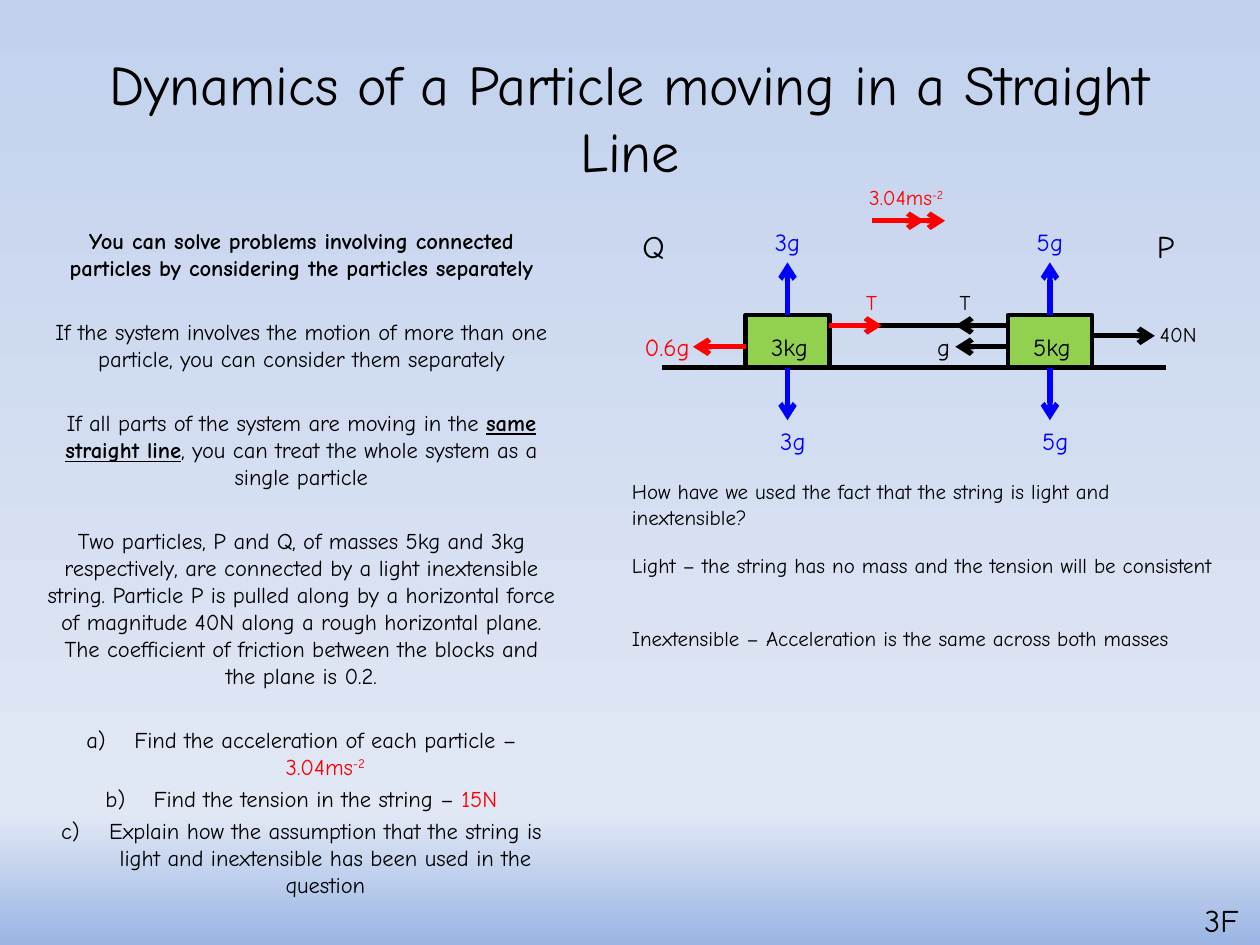
from copy import deepcopy

from lxml.etree import SubElement
from pptx import Presentation
from pptx.dml.color import RGBColor
from pptx.enum.shapes import MSO_CONNECTOR as Connector, MSO_SHAPE as Shape
from pptx.enum.text import MSO_ANCHOR as Anchor, MSO_AUTO_SIZE as AutoSize, PP_ALIGN as Align
from pptx.oxml.ns import qn
from pptx.util import Cm, Pt

COLORS = {
    "black": "000000", "red": "FF0000", "blue": "0000FF", "green": "92D050",
    "sky_top": "C2D1ED", "sky_mid": "E1E8F5", "sky_low": "9AB5E4",
}
FONT = "Comic Neue"
TITLE_ONLY = 5


def rgb(name):
    return RGBColor.from_string(COLORS[name])


def add_run(paragraph, text, size=12, color="black", bold=False, underline=False, raised=False):
    run = paragraph.add_run()
    run.text = text
    font = run.font
    font.name, font.size = FONT, Pt(size)
    font.bold, font.underline = bold, underline
    font.color.rgb = rgb(color)
    if raised:
        run._r.get_or_add_rPr().set("baseline", "30000")


class SlideBuilder:
    line_width = 3
    block_line_width = 2.5
    body_size = 12.9

    def __init__(self, slide):
        self.slide = slide

    def background(self, *stops):
        fill = self.slide.background.fill
        fill.gradient()
        fill.gradient_angle = 270
        stop_list = self.slide._element.find(".//" + qn("a:gsLst"))
        while len(stop_list) < len(stops):
            stop_list.append(deepcopy(stop_list[-1]))
        for stop, (position, color) in zip(fill.gradient_stops, stops):
            stop.position = position
            stop.color.rgb = rgb(color)

    def title(self, text, left, top, width, height):
        title = self.slide.shapes.title
        title.left, title.top, title.width, title.height = map(Cm, (left, top, width, height))
        frame = title.text_frame
        frame.word_wrap, frame.auto_size = True, AutoSize.NONE
        frame.vertical_anchor = Anchor.MIDDLE
        frame.paragraphs[0].alignment = Align.CENTER
        add_run(frame.paragraphs[0], text, size=32)

    def frame(self, left, top, width, height, wrap=True):
        box = self.slide.shapes.add_textbox(*map(Cm, (left, top, width, height)))
        box.text_frame.word_wrap = wrap
        return box.text_frame

    def label(self, text, left, top, width, height=0.86, align=Align.CENTER,
              wrap=False, power=None, **style):
        paragraph = self.frame(left, top, width, height, wrap).paragraphs[0]
        paragraph.alignment = align
        add_run(paragraph, text, **style)
        if power:
            add_run(paragraph, power, raised=True, **style)

    def body(self, paragraphs, left, top, width, height):
        """Each paragraph is (is_lettered, space_before, [(text, style), ...])."""
        frame = self.frame(left, top, width, height)
        for index, (lettered, space, runs) in enumerate(paragraphs):
            paragraph = frame.add_paragraph() if index else frame.paragraphs[0]
            paragraph.alignment = Align.CENTER
            paragraph.space_before = Pt(space)
            if lettered:
                properties = paragraph._p.get_or_add_pPr()
                properties.set("marL", str(Cm(0.97)))
                properties.set("indent", str(-Cm(0.97)))
                SubElement(properties, qn("a:buFont"), typeface=FONT)
                SubElement(properties, qn("a:buAutoNum"), type="alphaLcParenR")
            for text, style in runs:
                add_run(paragraph, text, size=self.body_size, **style)

    def block(self, left, top, width, height):
        block = self.slide.shapes.add_shape(Shape.RECTANGLE, *map(Cm, (left, top, width, height)))
        block.shadow.inherit = False
        block.fill.solid()
        block.fill.fore_color.rgb = rgb("green")
        block.line.color.rgb = rgb("black")
        block.line.width = Pt(self.block_line_width)

    def line(self, x, y, dx=0, dy=0, color="black", arrow=True):
        line = self.slide.shapes.add_connector(
            Connector.STRAIGHT, *map(Cm, (x, y, x + dx, y + dy)))
        line.line.color.rgb = rgb(color)
        line.line.width = Pt(self.line_width)
        if arrow:
            SubElement(line.line._get_or_add_ln(), qn("a:tailEnd"), type="arrow")
        SubElement(line._element.spPr, qn("a:effectLst"))


def draw_forces(page):
    q_left, p_left = 15.03, 20.32
    block_top, block_width, block_height = 6.35, 1.69, 1.06
    ground = block_top + block_height
    string_y, friction_y, pull_y = 6.56, 6.99, 6.77
    q_right, p_right = q_left + block_width, p_left + block_width
    force = 1.06

    # Ground, blocks and string
    page.line(13.34, ground, dx=10.16, arrow=False)
    for left in (q_left, p_left):
        page.block(left, block_top, block_width, block_height)
    page.line(q_right, string_y, dx=p_left - q_right, arrow=False)

    # Horizontal forces
    page.line(p_right, pull_y, dx=1.27)
    page.line(p_left, friction_y, dx=-force)
    page.line(q_left, friction_y, dx=-force, color="red")
    page.line(q_right, string_y, dx=force, color="red")
    page.line(p_left, string_y, dx=-force)

    # Acceleration, with a double head
    for length in (force, 1.48):
        page.line(17.57, 4.45, dx=length, color="red")

    # Weight and reaction on each block
    for left, mass in ((q_left, 3), (p_left, 5)):
        middle = left + block_width / 2
        page.line(middle, block_top, dy=-force, color="blue")
        page.line(middle, ground, dy=force, color="blue")
        page.label(f"{mass}kg", left + 0.21, string_y, 1.35, size=14)
        page.label(f"{mass}g", left + 0.21, 4.45, 1.27, size=14, color="blue")
        page.label(f"{mass}g", left + 0.42, 8.47, 1.07, size=14, color="blue")

    # Force and particle labels
    page.label("40N", 23.07, 6.35, 1.37, 0.76)
    page.label("T", 19.05, 5.72, 0.81, 0.76)
    page.label("T", 17.15, 5.72, 0.84, 0.76, color="red")
    page.label("3.04ms", 17.15, 3.6, 2.24, 0.76, power="-2", color="red")
    page.label("g", 18.63, string_y, 0.79, size=14)
    page.label("0.6g", 12.7, string_y, 1.5, size=14, color="red")
    page.label("P", 23.07, 4.45, 0.84, 1.02, align=Align.LEFT, size=18)
    page.label("Q", 12.7, 4.45, 1.07, 1.02, align=Align.LEFT, size=18)


def main():
    deck = Presentation()
    deck.slide_width, deck.slide_height = Cm(25.4), Cm(19.05)
    page = SlideBuilder(deck.slides.add_slide(deck.slide_layouts[TITLE_ONLY]))
    page.background((0, "sky_top"), (0.86, "sky_mid"), (1, "sky_low"))
    page.title("Dynamics of a Particle moving in a Straight Line", 1.27, 0.76, 22.86, 3.18)

    # Theory and question
    bold, red, plain = {"bold": True}, {"color": "red"}, {}
    section, item = 21, 2.7
    page.body([
        (False, 0, [("You can solve problems involving connected particles by "
                     "considering the particles separately", bold)]),
        (False, section, [("If the system involves the motion of more than one particle, "
                           "you can consider them separately", plain)]),
        (False, section, [("If all parts of the system are moving in the ", plain),
                          ("same straight line", {"bold": True, "underline": True}),
                          (", you can treat the whole system as a single particle", plain)]),
        (False, section, [("Two particles, P and Q, of masses 5kg and 3kg respectively, are "
                           "connected by a light inextensible string. Particle P is pulled "
                           "along by a horizontal force of magnitude 40N along a rough "
                           "horizontal plane. The coefficient of friction between the blocks "
                           "and the plane is 0.2.", plain)]),
        (True, section, [("Find the acceleration of each particle – ", plain),
                         ("3.04ms", red), ("-2", {"color": "red", "raised": True})]),
        (True, item, [("Find the tension in the string – ", plain), ("15N", red)]),
        (True, item, [("Explain how the assumption that the string is light and "
                       "inextensible has been used in the question", plain)]),
    ], 0.69, 4.45, 10.77, 13.79)

    draw_forces(page)

    # Answer to part c
    answers = (
        "How have we used the fact that the string is light and inextensible?",
        "Light – the string has no mass and the tension will be consistent",
        "Inextensible – Acceleration is the same across both masses",
    )
    for row, answer in enumerate(answers):
        page.label(answer, 12.49, 9.53 + 1.48 * row, 12.5, 1.27, align=Align.LEFT, wrap=True)

    # Section number
    page.label("3F", 24.03, 18.03, 1.3, 1.02, align=Align.LEFT, size=18)
    deck.save("out.pptx")


if __name__ == "__main__":
    main()
